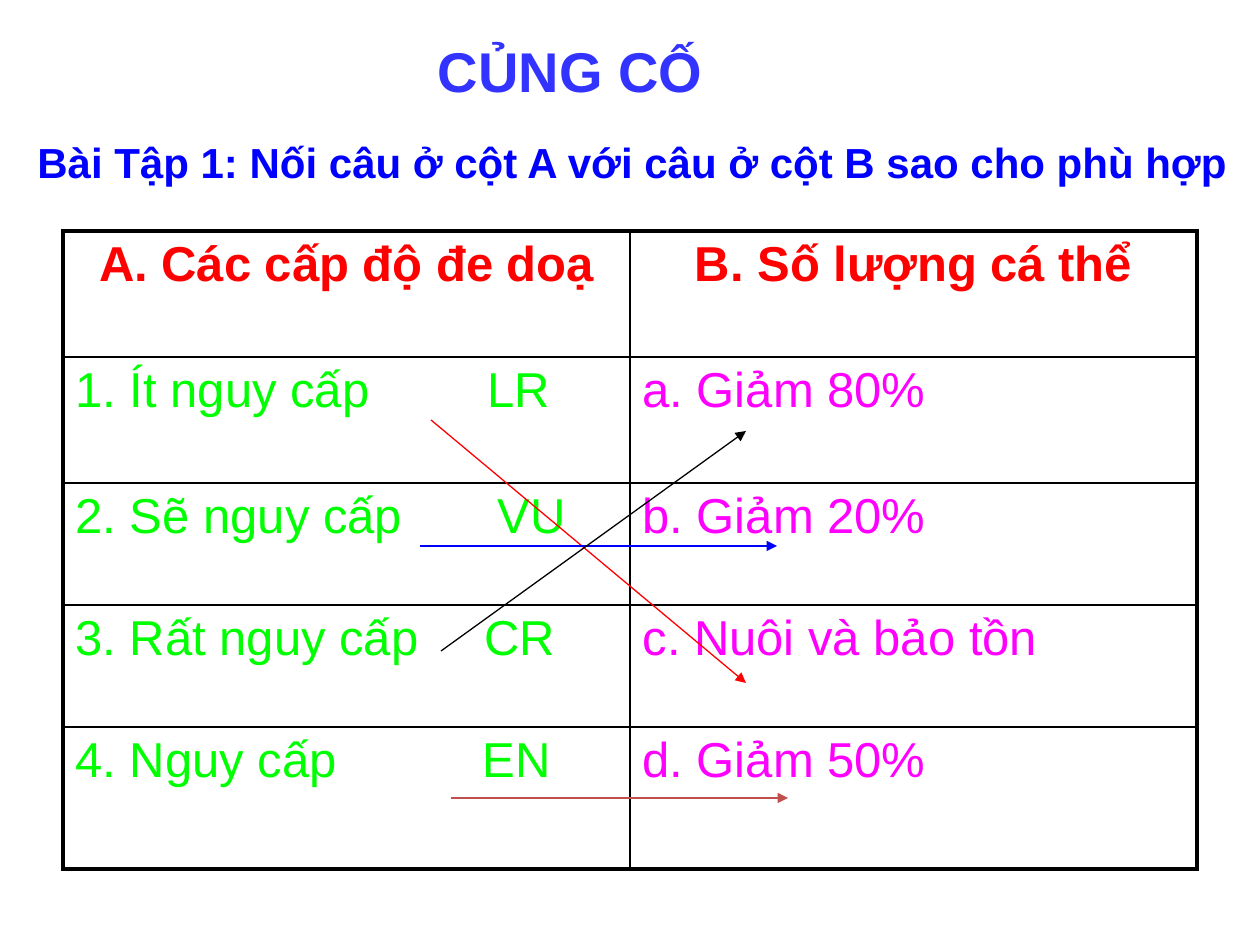
"""Build a matching exercise slide: a two-column table with answer arrows."""
from lxml.etree import SubElement
from pptx import Presentation
from pptx.dml.color import RGBColor
from pptx.enum.shapes import MSO_CONNECTOR
from pptx.enum.text import MSO_ANCHOR, MSO_AUTO_SIZE, PP_ALIGN
from pptx.oxml.ns import qn
from pptx.util import Emu, Pt

PIXEL = 914400 / 126
BLACK = RGBColor(0x00, 0x00, 0x00)
RED = RGBColor(0xFF, 0x00, 0x00)
GREEN = RGBColor(0x00, 0xFF, 0x00)
BLUE = RGBColor(0x00, 0x00, 0xFF)
MAGENTA = RGBColor(0xFF, 0x00, 0xFF)
TITLE_BLUE = RGBColor(0x33, 0x33, 0xFF)
BRICK = RGBColor(0xC0, 0x50, 0x4D)


def px(*lengths):
    return [Emu(round(length * PIXEL)) for length in lengths]


def write(text_frame, text, size, color, bold, alignment):
    paragraph = text_frame.paragraphs[0]
    paragraph.alignment = alignment
    run = paragraph.add_run()
    run.text = text
    run.font.name = "Arial"
    run.font.size = Pt(size)
    run.font.bold = bold
    run.font.color.rgb = color
    return paragraph


presentation = Presentation()
presentation.slide_width, presentation.slide_height = px(1260, 945)
slide = presentation.slides.add_slide(presentation.slide_layouts[5])

title = slide.shapes.title
title.left, title.top, title.width, title.height = px(284, 25, 588, 79)
subtitle = slide.shapes.add_textbox(*px(25, 126, 1288, 63))
headings = [
    (title, "CỦNG CỐ ", 32, TITLE_BLUE, PP_ALIGN.CENTER),
    (subtitle, "Bài Tập 1: Nối câu ở cột A với câu ở cột B sao cho phù hợp", 24, BLUE, PP_ALIGN.LEFT),
]
for shape, text, size, color, alignment in headings:
    text_frame = shape.text_frame
    text_frame.word_wrap = True
    text_frame.auto_size = MSO_AUTO_SIZE.NONE
    text_frame.vertical_anchor = MSO_ANCHOR.TOP
    text_frame.margin_top, text_frame.margin_bottom = px(11, 2)
    write(text_frame, text, size, color, True, alignment)

rows = [
    ("A. Các cấp độ đe doạ", "B. Số lượng cá thể"),
    ("1. Ít nguy cấp\tLR", "a. Giảm 80%"),
    ("2. Sẽ nguy cấp\tVU", "b. Giảm 20%"),
    ("3. Rất nguy cấp\tCR", "c. Nuôi và bảo tồn"),
    ("4. Nguy cấp\tEN", "d. Giảm 50%"),
]
row_heights = px(126, 126, 122, 122, 142)
tab_stops = px(0, 412, 422, 409, 407)
table = slide.shapes.add_table(5, 2, *px(63, 231, 1134, 638)).table
table.first_row = False
table.horz_banding = False
for column in table.columns:
    column.width = px(567)[0]

for row_index, texts in enumerate(rows):
    table.rows[row_index].height = row_heights[row_index]
    is_header = row_index == 0
    for column_index, text in enumerate(texts):
        cell = table.cell(row_index, column_index)
        cell.vertical_anchor = MSO_ANCHOR.TOP
        color = RED if is_header else (GREEN, MAGENTA)[column_index]
        alignment = PP_ALIGN.CENTER if is_header else PP_ALIGN.LEFT
        paragraph = write(cell.text_frame, text, 28, color, is_header, alignment)
        if "\t" in text:
            tab_list = SubElement(paragraph._p.get_or_add_pPr(), qn("a:tabLst"))
            SubElement(tab_list, qn("a:tab"), pos=str(tab_stops[row_index]), algn="l")
        outer_edges = {
            "a:lnL": column_index == 0,
            "a:lnR": column_index == 1,
            "a:lnT": is_header,
            "a:lnB": row_index == len(rows) - 1,
        }
        cell_properties = cell._tc.get_or_add_tcPr()
        for edge, is_outer in outer_edges.items():
            border = SubElement(cell_properties, qn(edge), w=str(Pt(2.25 if is_outer else 1)))
            border_fill = SubElement(border, qn("a:solidFill"))
            SubElement(border_fill, qn("a:srgbClr"), val=str(BLACK))
        cell.fill.background()

answer_arrows = [
    (431, 420, 746, 683, RED),
    (420, 546, 777, 546, BLUE),
    (441, 651, 746, 431, BLACK),
    (451, 798, 788, 798, BRICK),
]
for *ends, color in answer_arrows:
    arrow = slide.shapes.add_connector(MSO_CONNECTOR.STRAIGHT, *px(*ends))
    arrow.line.color.rgb = color
    arrow.line.width = Pt(0.75)
    SubElement(arrow.line._get_or_add_ln(), qn("a:tailEnd"), type="triangle")
    SubElement(arrow._element.spPr, qn("a:effectLst"))

presentation.save("out.pptx")
